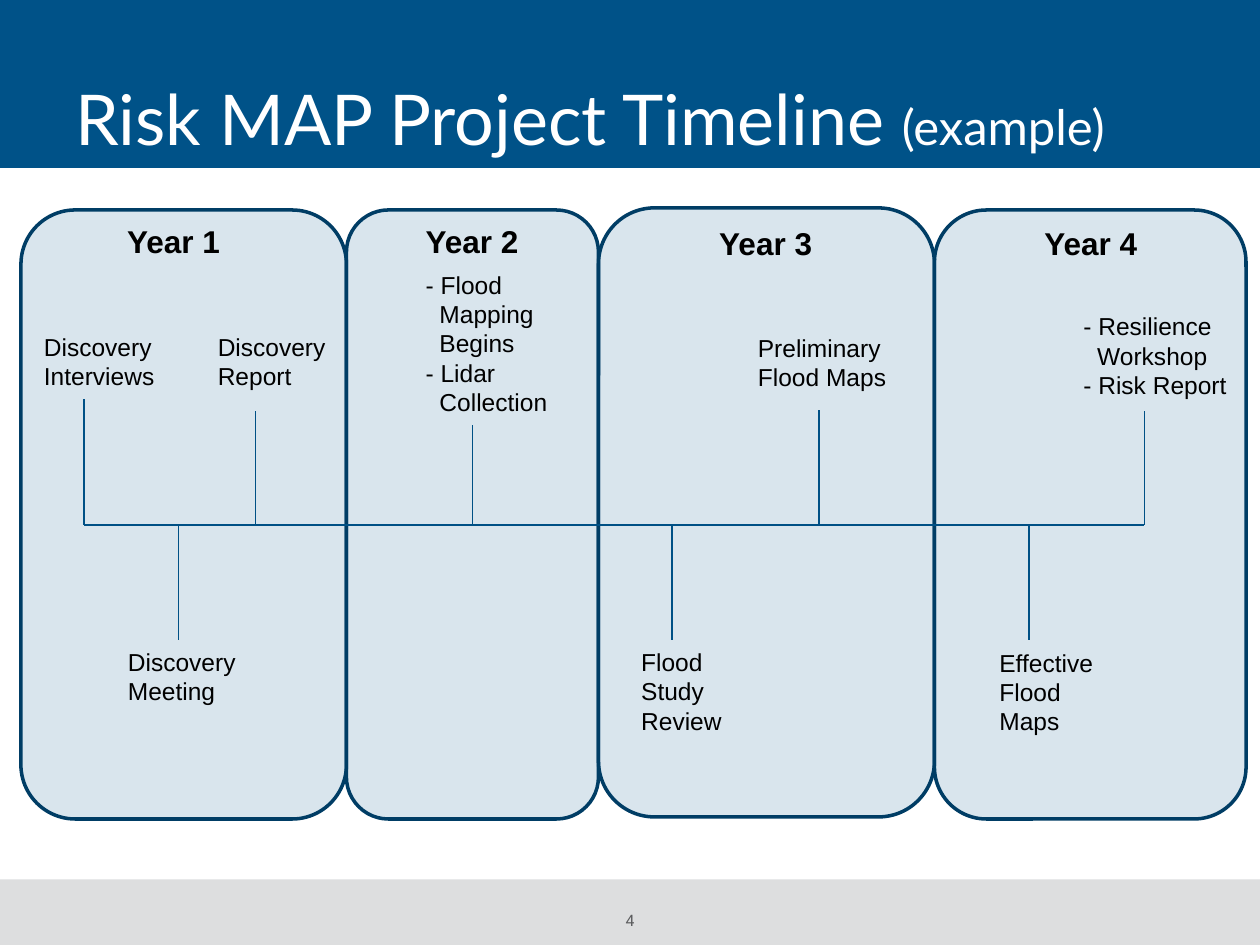
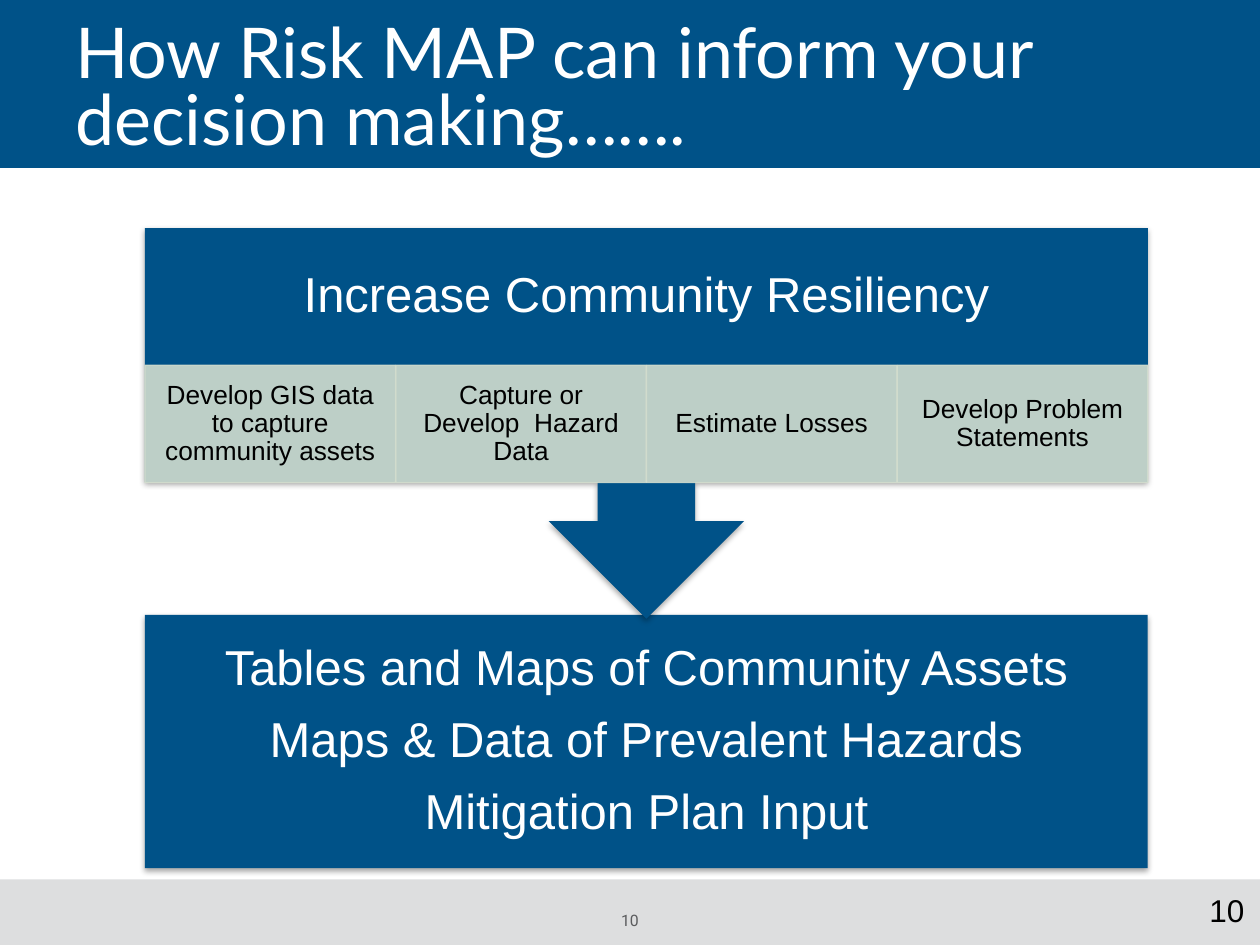
from lxml import etree
from pptx import Presentation
from pptx import util as u
from pptx.dml.color import RGBColor
from pptx.enum import shapes, text
from pptx.oxml import ns

COLORS = {
    "blue": "005288", "navy": "003D65", "line": "005085", "sage": "D2DDCE",
    "footer": "DDDEDF", "grey": "5B5C5E", "white": "FFFFFF", "black": "000000",
}

# Text styles: paragraph settings, font settings and colour
STYLES = {
    "title": ({"line_spacing": 0.8}, {"size": u.Pt(40), "name": "Lato"}, "white"),
    "page": ({"alignment": text.PP_ALIGN.CENTER},
             {"size": u.Pt(9), "name": "Roboto"}, "grey"),
    "number": ({}, {"size": u.Pt(18), "name": "Arial"}, "black"),
    "year": ({}, {"size": u.Pt(18), "name": "Arial", "bold": True}, "black"),
    "label": ({}, {"size": u.Pt(14), "name": "Arial"}, "black"),
    "banner": ({"alignment": text.PP_ALIGN.CENTER, "line_spacing": 0.9,
                "space_after": u.Pt(11)},
               {"size": u.Pt(28), "name": "Arial"}, "white"),
    "step": ({"alignment": text.PP_ALIGN.CENTER, "line_spacing": 0.9},
             {"size": u.Pt(15), "name": "Arial"}, "black"),
}

COLS, ROWS = 120, 90  # grid of square cells, twelve to the inch
CELL = u.Inches(10) // COLS


def grid(*cells):
    return [round(c * CELL) for c in cells]


def set_all(target, values):
    for name, value in values.items():
        setattr(target, name, value)


def add_alpha(fill, percent):
    clr = next(fill.iter(ns.qn("a:srgbClr")))
    etree.SubElement(clr, ns.qn("a:alpha")).set("val", str(percent * 1000))


class Deck:
    def __init__(self):
        self.prs = Presentation()
        self.prs.slide_width, self.prs.slide_height = grid(COLS, ROWS)
        self.s = None

    def color(self, name):
        return RGBColor.from_string(COLORS[name])

    def new_slide(self, title, page):
        """Start a slide with its bands, title and page number."""
        self.s = self.prs.slides.add_slide(self.prs.slide_layouts[6])
        self.shape("RECTANGLE", (0, 83.76, COLS, 6.24), "footer")
        self.text((50, 86.76, 20, 1.8), [page], "page", inset=(0, 0))
        self.shape("RECTANGLE", (0, 0, COLS, 16), "blue")
        self.text((6, 0.6, 108, 15.12), [title], "title", anchor="BOTTOM")

    def shape(self, kind, box, fill, line=None, width=0.75, alpha=None):
        sp = self.s.shapes.add_shape(shapes.MSO_SHAPE[kind], *grid(*box))
        sp.shadow.inherit = False
        sp.fill.solid()
        sp.fill.fore_color.rgb = self.color(fill)
        if alpha:
            add_alpha(sp._element.spPr.find(ns.qn("a:solidFill")), alpha)
        if line:
            sp.line.color.rgb = self.color(line)
            sp.line.width = u.Pt(width)
        else:
            sp.line.fill.background()
        return sp

    def cast_shadow(self, sp, angle=90):
        effects = sp._element.spPr.find(ns.qn("a:effectLst"))
        shadow = etree.SubElement(effects, ns.qn("a:outerShdw"), {
            "blurRad": str(u.Pt(3.1)), "dist": str(u.Pt(1.8)),
            "dir": str(angle * 60000), "rotWithShape": "0"})
        clr = etree.SubElement(shadow, ns.qn("a:srgbClr"), val=COLORS["black"])
        etree.SubElement(clr, ns.qn("a:alpha"), val="35000")

    def line(self, *ends):
        cx = self.s.shapes.add_connector(shapes.MSO_CONNECTOR.STRAIGHT, *grid(*ends))
        cx.line.color.rgb = self.color("line")
        cx.line.width = u.Pt(0.75)
        etree.SubElement(cx._element.spPr, ns.qn("a:effectLst"))

    def text(self, box, paragraphs, style, **options):
        sp = self.s.shapes.add_textbox(*grid(*box))
        self.fill_text(sp, paragraphs, style, **options)

    def fill_text(self, sp, paragraphs, style, anchor="TOP", inset=(0.1, 0.05), wrap=True):
        """Fill a shape; a paragraph is a string or a list of (text, size) runs."""
        tf = sp.text_frame
        side, edge = map(u.Inches, inset)
        set_all(tf, {
            "word_wrap": wrap, "vertical_anchor": text.MSO_ANCHOR[anchor],
            "margin_left": side, "margin_right": side,
            "margin_top": edge, "margin_bottom": edge})
        if not wrap:
            tf.auto_size = text.MSO_AUTO_SIZE.SHAPE_TO_FIT_TEXT
        layout, font, color = STYLES[style]
        for i, content in enumerate(paragraphs):
            p = tf.add_paragraph() if i else tf.paragraphs[0]
            set_all(p, layout)
            if isinstance(content, str):
                content = [(content, None)]
            for words, size in content:
                if words.startswith("- "):  # hang further lines under the dash item
                    pPr = p._p.get_or_add_pPr()
                    pPr.set("marL", str(u.Inches(0.11)))
                    pPr.set("indent", str(u.Inches(-0.11)))
                for j, part in enumerate(words.split("\n")):
                    if j:
                        p.add_line_break()
                    r = p.add_run()
                    r.text = part
                    set_all(r.font, font)
                    r.font.color.rgb = self.color(color)
                    if size:
                        r.font.size = u.Pt(size)


def timeline(deck):
    deck.new_slide([("Risk MAP Project Timeline ", None), ("(example)", 28)], "4")

    # Year panels: left, right, top, heading left, heading top
    years = [(2, 33, 20, 10.92, 20.52), (33, 57, 20, 39.36, 20.52),
             (57, 89, 19.8, 67.32, 20.76), (89, 118.68, 20, 98.28, 20.76)]
    for left, right, top, *_ in years:
        deck.shape("ROUNDED_RECTANGLE", (left, top, right - left, 58),
                   "blue", "navy", 2, alpha=15)
    for n, (*_, left, top) in enumerate(years, 1):
        deck.text((left, top, 11.4, 4.8), [f"Year {n}"], "year", wrap=False)

    # Milestones: label, left, top, width, stem column, stem end
    axis = 50
    milestones = [
        (["Discovery", "Interviews"], 3, 31, 13.44, 8, 38),
        (["Discovery", "Meeting"], 11, 61, 13.44, 17, 61),
        (["Discovery", "Report"], 19.56, 31, 13.44, 24.36, 39.12),
        (["- Flood\nMapping\nBegins", "- Lidar\nCollection"],
         39.36, 25.08, 14.04, 45, 40.44),
        (["Flood", "Study", "Review"], 59.88, 61, 10.2, 64, 61),
        (["Preliminary", "Flood Maps"], 71, 31.08, 14.64, 78, 39),
        (["Effective", "Flood", "Maps"], 94, 61.08, 12, 98, 61),
        (["- Resilience\nWorkshop", "- Risk Report"], 102, 29.04, 16.08, 109, 39.12),
    ]
    deck.line(milestones[0][4], axis, milestones[-1][4], axis)
    for label, left, top, width, col, end in milestones:
        deck.line(col, axis, col, end)
        lines = len("\n".join(label).split("\n"))
        deck.text((left, top, width, 1.2 + 2.83 * lines), label, "label", wrap=False)


def decisions(deck):
    deck.new_slide("How Risk MAP can inform your decision making…….", "10")
    left, width = 13.8, 95.52
    banner = {"anchor": "MIDDLE", "inset": (0.22, 0.22)}

    # Results box
    results = deck.shape("RECTANGLE", (left, 58.56, width, 24.12), "blue")
    deck.cast_shadow(results)
    deck.fill_text(results, ["Tables and Maps of Community Assets",
                             "Maps & Data of Prevalent Hazards",
                             "Mitigation Plan Input"], "banner", **banner)

    # Goal with arrow pointing down to the results
    goal = deck.shape("UP_ARROW_CALLOUT", (left, 21.72, width, 37.2), "blue")
    goal.rotation = 180
    deck.cast_shadow(goal)
    deck.text((left, 21.72, width, 13.08), ["Increase Community Resiliency"],
              "banner", **banner)

    # Row of steps
    steps = ["Develop GIS data to capture community assets",
             "Capture or Develop  Hazard Data",
             "Estimate Losses",
             "Develop Problem Statements"]
    step_width = width / len(steps)
    for i, step in enumerate(steps):
        sp = deck.shape("RECTANGLE", (left + i * step_width, 34.8, step_width, 11.16),
                        "sage", "sage", alpha=90)
        add_alpha(sp.line._ln, 90)
        deck.fill_text(sp, [step], "step", anchor="MIDDLE", inset=(0.12, 0.02))

    deck.text((114, 84.24, 6, 6), ["10"], "number")


def main():
    deck = Deck()
    timeline(deck)
    decisions(deck)
    deck.prs.save("out.pptx")


if __name__ == "__main__":
    main()
